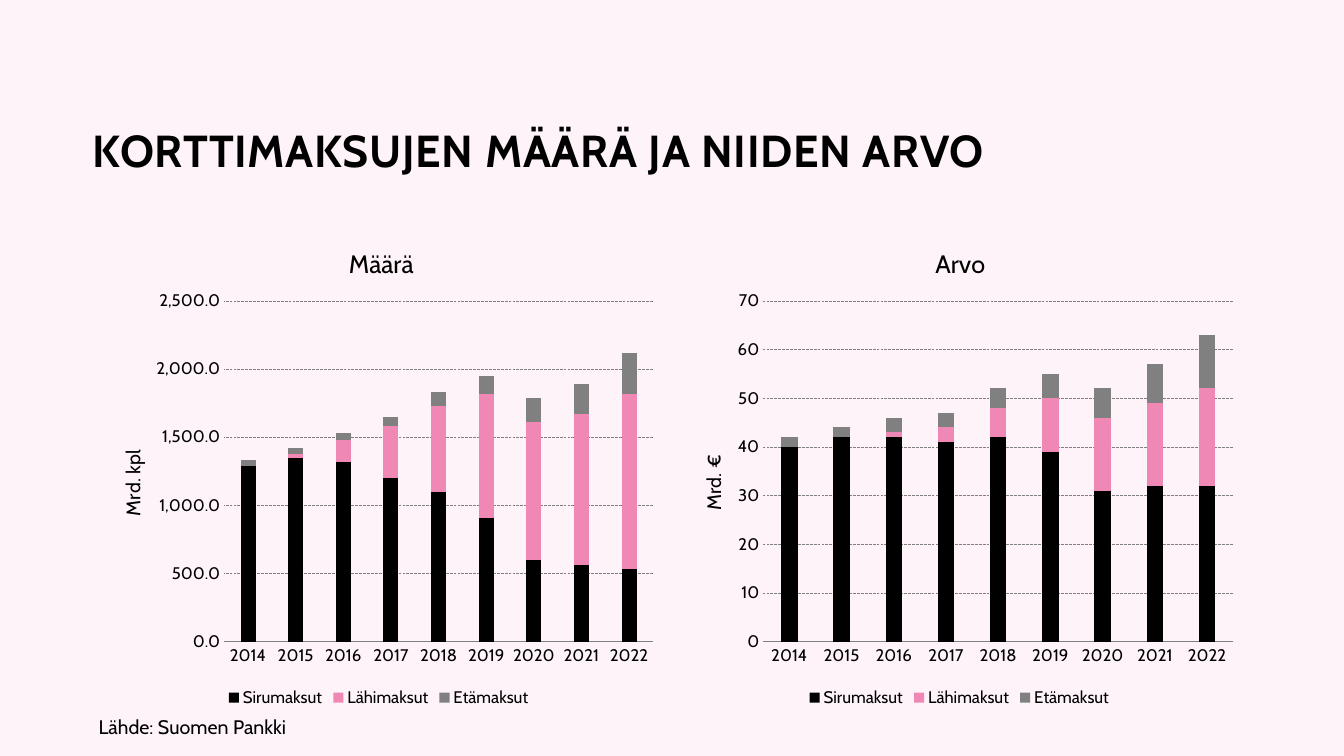
from dataclasses import dataclass

from lxml import etree
from pptx import Presentation
from pptx import util as u
from pptx.chart.data import CategoryChartData
from pptx.dml.color import RGBColor
from pptx.enum import chart as ch, dml, text
from pptx.oxml.ns import qn


@dataclass(frozen=True)
class Theme:
    font: str = "Cabin"
    paper: str = "FEF3F9"
    ink: str = "000000"
    pink: str = "F088B6"
    grey: str = "808080"
    title: int = 32
    chart_title: int = 18
    body: int = 14
    label: int = 12


T = Theme()
SLIDE_W, SLIDE_H = 13.33, 7.5
YEARS = [str(year) for year in range(2014, 2023)]
SERIES = {"Sirumaksut": T.ink, "Lähimaksut": T.pink, "Etämaksut": T.grey}
CHART_TOP, CHART_W, CHART_H = 2.18, 5.67, 4.88
PLOT_TOP, PLOT_H = 0.165, 0.693

CHARTS = [
    dict(left=0.92, title="Määrä", title_at=(0.44, 0.045), unit="Mrd. kpl",
         unit_at=(0.04, 0.46), plot=(0.23, 0.75), top=2500, step=500, fmt="#,##0.0",
         values=[[1290, 1350, 1320, 1200, 1100, 910, 600, 560, 530],
                 [0, 30, 160, 380, 630, 910, 1010, 1110, 1290],
                 [40, 40, 50, 70, 100, 130, 180, 220, 300]]),
    dict(left=6.68, title="Arvo", title_at=(0.45, 0.045), unit="Mrd. €",
         unit_at=(0.04, 0.47), plot=(0.157, 0.822), top=70, step=10, fmt="General",
         values=[[40, 42, 42, 41, 42, 39, 31, 32, 32],
                 [0, 0, 1, 3, 6, 11, 15, 17, 20],
                 [2, 2, 3, 3, 4, 5, 6, 8, 11]]),
]


def style(font, size, bold=False):
    font.name, font.size, font.bold = T.font, u.Pt(size), bold
    font.color.rgb = RGBColor.from_string(T.ink)


def draw_line(line, width, dash=None):
    line.color.rgb = RGBColor.from_string(T.grey)
    line.width = u.Pt(width)
    if dash:
        line.dash_style = dash


def set_layout(element, index, **shares):
    """Fix a chart part at shares of the chart's size; index is its place among the children."""
    old = element.find(qn("c:layout"))
    if old is not None:
        element.remove(old)
    layout = etree.Element(qn("c:layout"))
    element.insert(index, layout)
    manual = etree.SubElement(layout, qn("c:manualLayout"))
    if "w" in shares:
        etree.SubElement(manual, qn("c:layoutTarget")).set("val", "inner")
    for mode in ("xMode", "yMode"):
        etree.SubElement(manual, qn("c:" + mode)).set("val", "edge")
    for name, share in shares.items():
        etree.SubElement(manual, qn("c:" + name)).set("val", str(share))


def add_chart_title(title, words, size, at):
    title.text_frame.text = words
    style(title.text_frame.paragraphs[0].runs[0].font, size)
    set_layout(title._element, 1, x=at[0], y=at[1])


def add_stacked_chart(s, box, spec):
    data = CategoryChartData(number_format=spec["fmt"])
    data.categories = YEARS
    for name, values in zip(SERIES, spec["values"]):
        data.add_series(name, values)
    chart = s.shapes.add_chart(ch.XL_CHART_TYPE.COLUMN_STACKED,
                               *map(u.Inches, box), data).chart
    style(chart.font, T.label)
    add_chart_title(chart.chart_title, spec["title"], T.chart_title, spec["title_at"])

    plot = chart.plots[0]
    plot.gap_width, plot.overlap, plot.vary_by_categories = 219, 100, False
    for series, color in zip(plot.series, SERIES.values()):
        series.format.fill.solid()
        series.format.fill.fore_color.rgb = RGBColor.from_string(color)
    x, w = spec["plot"]
    set_layout(chart._chartSpace.chart.plotArea, 0, x=x, y=PLOT_TOP, w=w, h=PLOT_H)

    cats, vals = chart.category_axis, chart.value_axis
    for axis in (cats, vals):
        axis.major_tick_mark = axis.minor_tick_mark = ch.XL_TICK_MARK.NONE
        style(axis.tick_labels.font, T.label)
    draw_line(cats.format.line, 0.75)
    vals.format.line.fill.background()
    vals.minimum_scale, vals.maximum_scale, vals.major_unit = 0, spec["top"], spec["step"]
    vals.tick_labels.number_format = spec["fmt"]
    vals.tick_labels.number_format_is_linked = False
    draw_line(vals.major_gridlines.format.line, 0.25, dml.MSO_LINE.LONG_DASH)
    add_chart_title(vals.axis_title, spec["unit"], T.body, spec["unit_at"])

    chart.has_legend = True
    chart.legend.position = ch.XL_LEGEND_POSITION.BOTTOM
    chart.legend.include_in_layout = False
    style(chart.legend.font, T.label)


def add_title(s, box, words):
    sp = s.shapes.title
    sp.left, sp.top, sp.width, sp.height = map(u.Inches, box)
    tf = sp.text_frame
    tf.text = words
    tf.auto_size = text.MSO_AUTO_SIZE.NONE
    tf.vertical_anchor = text.MSO_ANCHOR.MIDDLE
    p = tf.paragraphs[0]
    p.alignment, p.line_spacing = text.PP_ALIGN.LEFT, 0.9
    r = p.runs[0]
    style(r.font, T.title, bold=True)
    r.font._element.set("spc", "50")


def add_source(s, box, words):
    tf = s.shapes.add_textbox(*map(u.Inches, box)).text_frame
    tf.word_wrap = True
    tf.text = words
    style(tf.paragraphs[0].runs[0].font, T.body)


def main():
    prs = Presentation()
    prs.slide_width, prs.slide_height = u.Inches(SLIDE_W), u.Inches(SLIDE_H)
    s = prs.slides.add_slide(prs.slide_layouts[5])
    s.background.fill.solid()
    s.background.fill.fore_color.rgb = RGBColor.from_string(T.paper)
    add_title(s, (0.82, 0.79, 11.5, 1.45), "KORTTIMAKSUJEN MÄÄRÄ JA NIIDEN ARVO")
    for spec in CHARTS:
        add_stacked_chart(s, (spec["left"], CHART_TOP, CHART_W, CHART_H), spec)
    add_source(s, (0.88, 7.04, 5.22, 0.34), "Lähde: Suomen Pankki")
    prs.save("out.pptx")


if __name__ == "__main__":
    main()
